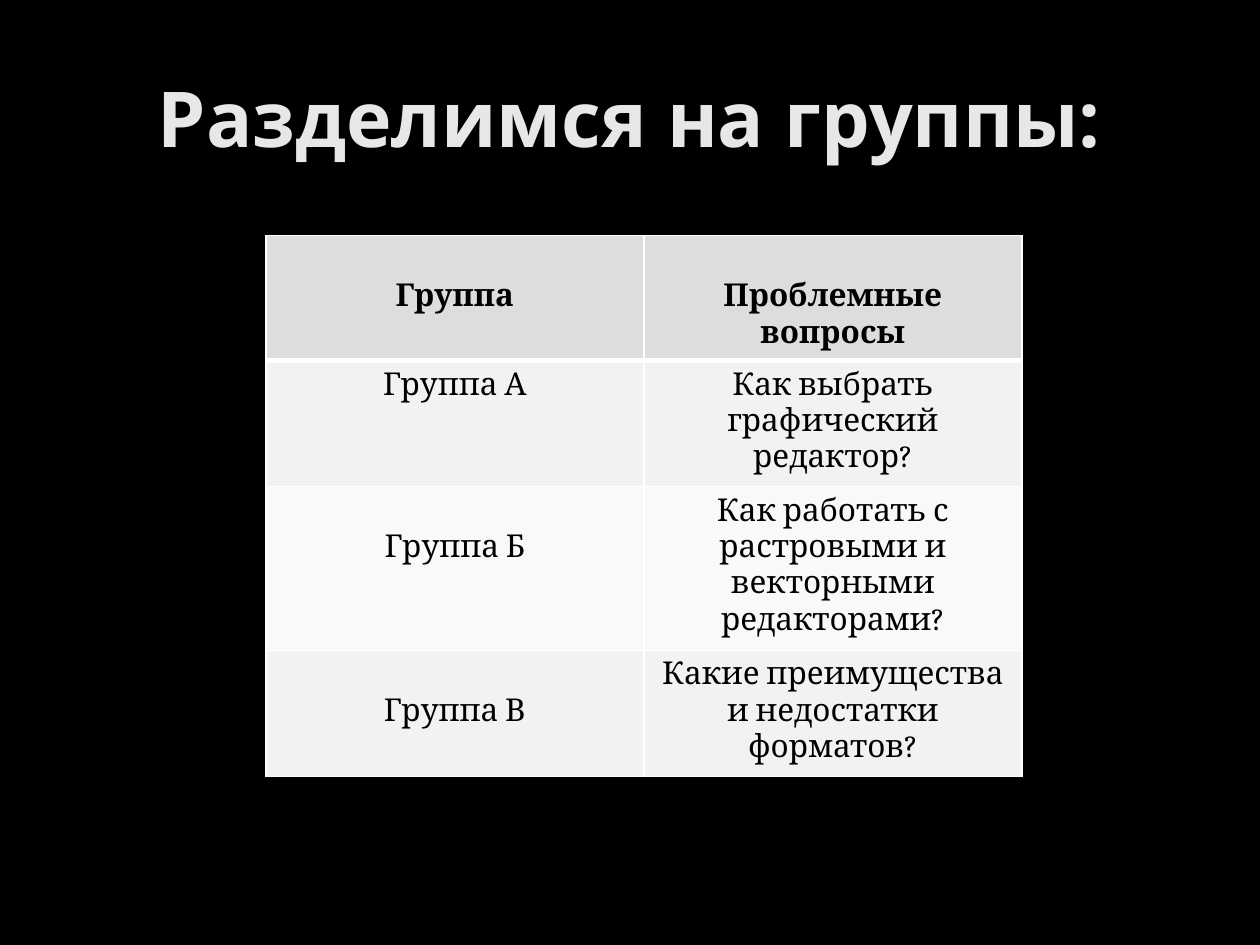
from lxml.etree import SubElement
from pptx import Presentation
from pptx.dml.color import RGBColor as RGB
from pptx.enum.text import MSO_ANCHOR as Anchor, PP_ALIGN as Align
from pptx.oxml.ns import qn
from pptx.util import Inches, Pt

COLORS = {"background": "000000", "title": "E7E7E7", "text": "000000", "border": "FFFFFF",
          "header": "DDDDDD", "odd": "F2F2F2", "even": "F9F9F9"}
TITLE = "Разделимся на группы:"
GROUPS = [
    ("Группа", "Проблемные вопросы"),
    ("Группа А", "Как выбрать графический редактор?"),
    ("Группа Б", "Как работать с растровыми и векторными редакторами?"),
    ("Группа В", "Какие преимущества и недостатки форматов?"),
]
LOWERED = {(0, 0), (0, 1), (2, 0), (3, 0)}
TITLE_FONT = {"name": "Open Sans", "size": Pt(44), "bold": True}
CELL_FONT = {"name": "Cambria", "size": Pt(18)}
CELL_MARGIN, LINE_HEIGHT = 0.05, 0.29
COLUMN_WIDTH, ROW_HEIGHT = 3, 0.91


def color(name):
    return RGB.from_string(COLORS[name])


def write(frame, words, font, color_name):
    paragraph = frame.paragraphs[0]
    paragraph.alignment = Align.CENTER
    run = paragraph.add_run()
    run.text = words
    for key, value in font.items():
        setattr(run.font, key, value)
    run.font.color.rgb = color(color_name)


def add_borders(cell, widths):
    properties = cell._tc.get_or_add_tcPr()
    for position, (side, width) in enumerate(widths.items()):
        line = SubElement(properties, qn(f"a:{side}"), w=str(Pt(width)))
        SubElement(SubElement(line, qn("a:solidFill")), qn("a:srgbClr"), val=COLORS["border"])
        properties.insert(position, line)


def add_title(slide):
    title = slide.shapes.add_textbox(Inches(0.5), Inches(0.3), Inches(9), Inches(1.25))
    title.text_frame.word_wrap = True
    title.text_frame.vertical_anchor = Anchor.MIDDLE
    write(title.text_frame, TITLE, TITLE_FONT, "title")


def add_groups(slide):
    count = len(GROUPS)
    table = slide.shapes.add_table(count, 2, Inches(2.11), Inches(1.87),
                                   Inches(2 * COLUMN_WIDTH), Inches(count * ROW_HEIGHT)).table
    for r, group in enumerate(GROUPS):
        fill = "header" if r == 0 else "odd" if r % 2 else "even"
        for c, words in enumerate(group):
            cell = table.cell(r, c)
            cell.fill.solid()
            cell.fill.fore_color.rgb = color(fill)
            cell.margin_top = Inches(CELL_MARGIN + LINE_HEIGHT * ((r, c) in LOWERED))
            write(cell.text_frame, words, {**CELL_FONT, "bold": r == 0}, "text")
            add_borders(cell, {"lnL": 1, "lnR": 1, "lnT": 3 if r == 1 else 1,
                               "lnB": 3 if r == 0 else 1})


def main():
    deck = Presentation()
    deck.slide_width, deck.slide_height = Inches(10), Inches(7.5)
    slide = deck.slides.add_slide(deck.slide_layouts[6])
    slide.background.fill.solid()
    slide.background.fill.fore_color.rgb = color("background")
    add_title(slide)
    add_groups(slide)
    deck.save("out.pptx")


if __name__ == "__main__":
    main()
